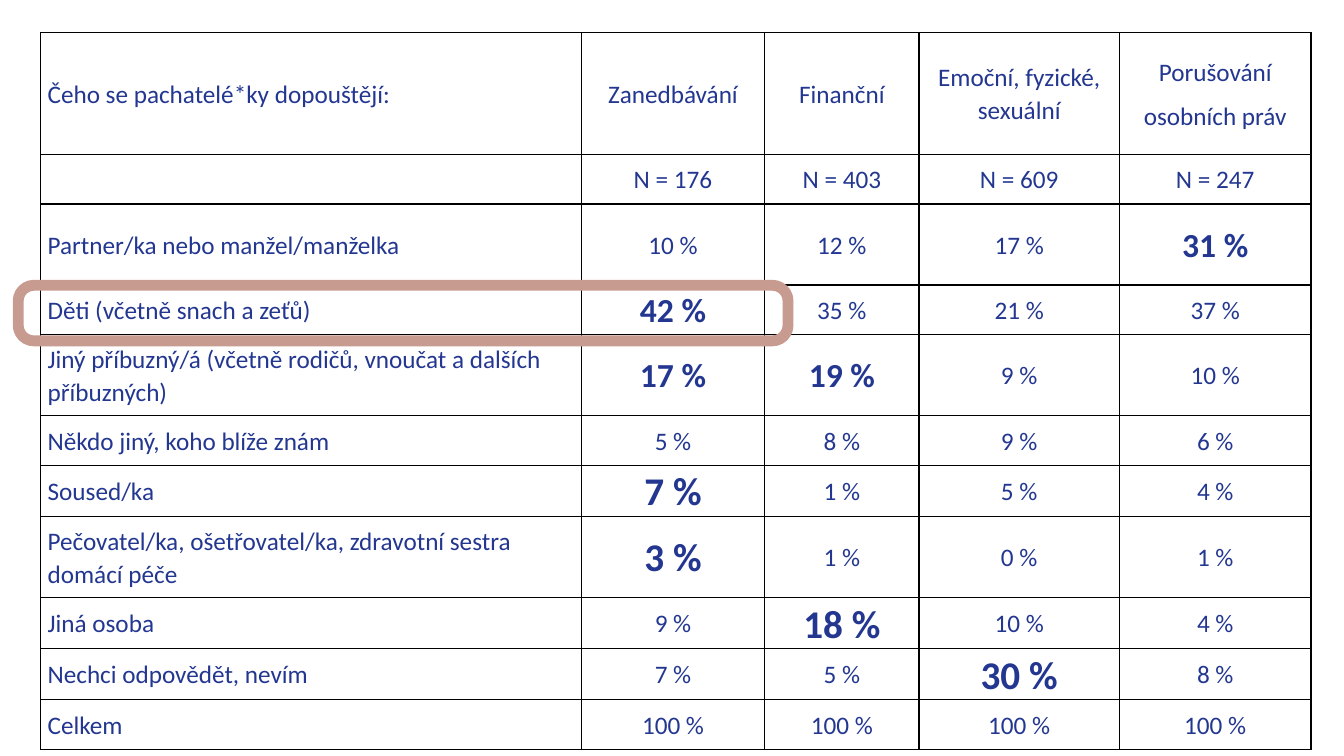
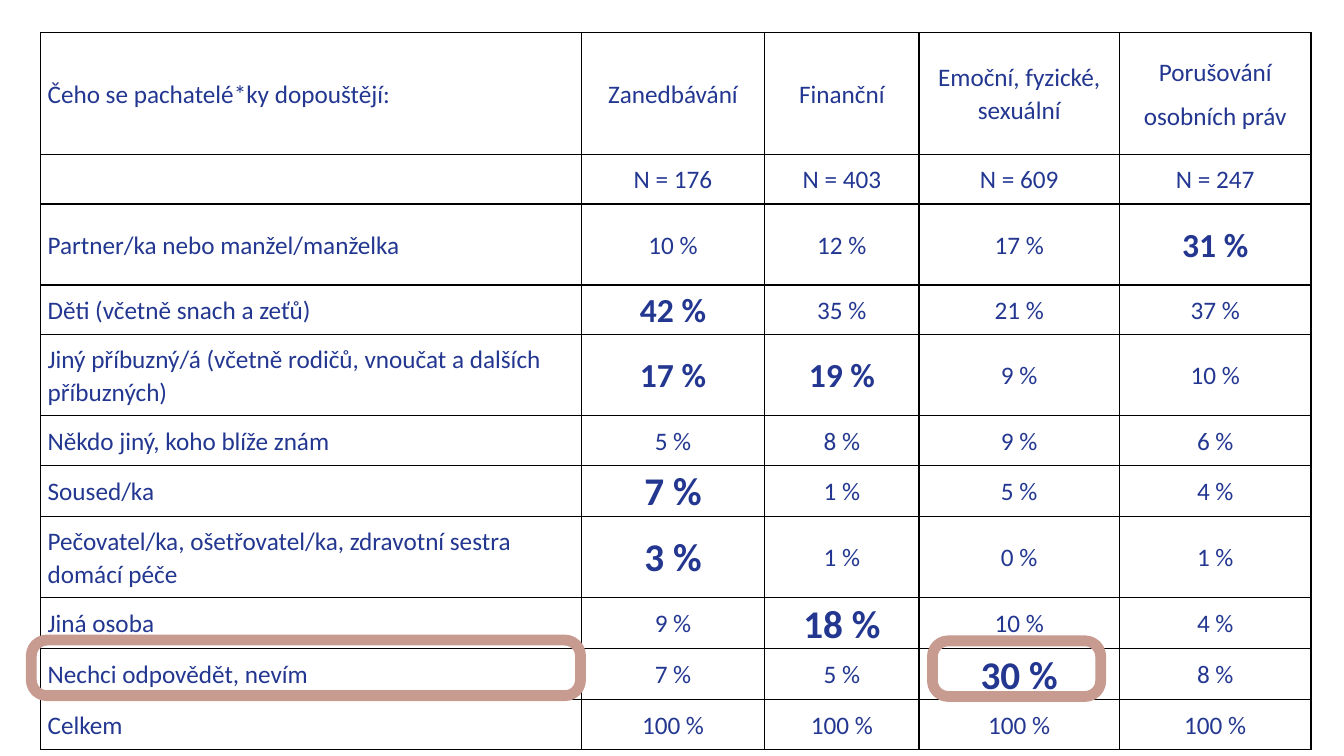
from pptx import Presentation
from pptx.dml.color import RGBColor
from pptx.enum.shapes import MSO_SHAPE
from pptx.enum.text import MSO_ANCHOR, PP_ALIGN
from pptx.oxml import parse_xml
from pptx.oxml.ns import nsdecls
from pptx.util import Cm, Pt

NAVY = "233791"
ROSE = "C89B91"
BLACK = "000000"
FONT = "Calibri"

# Table geometry in centimetres
TABLE_LEFT, TABLE_TOP = 1.02, 0.82
COLUMN_WIDTHS = [13.63, 4.62, 3.89, 5.05, 4.83]
HEADER, SINGLE, DOUBLE = 3.07, 1.25, 2.04
ROW_HEIGHTS = [HEADER, SINGLE, DOUBLE, SINGLE, DOUBLE, SINGLE,
               SINGLE, DOUBLE, SINGLE, SINGLE, SINGLE]

ROWS = [
    ["Čeho se pachatelé*ky dopouštějí:", "Zanedbávání", "Finanční",
     "Emoční, fyzické, sexuální", "Porušování\nosobních práv"],
    ["", "N = 176", "N = 403", "N = 609", "N = 247"],
    ["Partner/ka nebo manžel/manželka", "10 %", "12 %", "17 %", "31 %"],
    ["Děti (včetně snach a zeťů)", "42 %", "35 %", "21 %", "37 %"],
    ["Jiný příbuzný/á (včetně rodičů, vnoučat a dalších příbuzných)",
     "17 %", "19 %", "9 %", "10 %"],
    ["Někdo jiný, koho blíže znám", "5 %", "8 %", "9 %", "6 %"],
    ["Soused/ka", "7 %", "1 %", "5 %", "4 %"],
    ["Pečovatel/ka, ošetřovatel/ka, zdravotní sestra domácí péče",
     "3 %", "1 %", "0 %", "1 %"],
    ["Jiná osoba", "9 %", "18 %", "10 %", "4 %"],
    ["Nechci odpovědět, nevím", "7 %", "5 %", "30 %", "8 %"],
    ["Celkem", "100 %", "100 %", "100 %", "100 %"],
]

# Bold values: (row, column) -> size in points
EMPHASIS = {(2, 4): 24, (3, 1): 24, (4, 1): 24, (4, 2): 24,
            (6, 1): 28, (7, 1): 28, (8, 2): 28, (9, 3): 28}

# Highlight frames of each slide: left, top, width in centimetres
FRAME_HEIGHT = 1.4
SLIDE_FRAMES = [
    [(0.46, 7.19, 19.4)],
    [(23.5, 16.15, 4.24), (0.79, 16.13, 13.84)],
]


def color(value):
    return RGBColor.from_string(value)


def format_cell(cell, text, size, bold, alignment):
    cell.text = text
    cell.vertical_anchor = MSO_ANCHOR.MIDDLE
    cell.margin_left = cell.margin_right = Cm(0.18)
    cell.margin_top = cell.margin_bottom = 0
    for paragraph in cell.text_frame.paragraphs:
        paragraph.alignment = alignment
        paragraph.line_spacing = 1.07
        paragraph.space_after = Pt(8)
        paragraph.font.name = FONT
        paragraph.font.size = Pt(size)
        paragraph.font.bold = bold
        paragraph.font.color.rgb = color(NAVY)
    properties = cell._tc.get_or_add_tcPr()
    for side in ("lnL", "lnR", "lnT", "lnB"):
        properties.append(parse_xml(
            f'<a:{side} {nsdecls("a")} w="{Pt(1)}"><a:solidFill>'
            f'<a:srgbClr val="{BLACK}"/></a:solidFill></a:{side}>'))
    cell.fill.background()


presentation = Presentation()
presentation.slide_width = Cm(33.87)
presentation.slide_height = Cm(19.05)
blank_layout = presentation.slide_layouts[6]

for frames in SLIDE_FRAMES:
    slide = presentation.slides.add_slide(blank_layout)

    # Table of perpetrators by type of abuse
    table = slide.shapes.add_table(
        len(ROWS), len(COLUMN_WIDTHS), Cm(TABLE_LEFT), Cm(TABLE_TOP),
        Cm(sum(COLUMN_WIDTHS)), Cm(sum(ROW_HEIGHTS))).table
    table.first_row = False
    table.horz_banding = False
    for column, width in zip(table.columns, COLUMN_WIDTHS):
        column.width = Cm(width)
    for row, height in zip(table.rows, ROW_HEIGHTS):
        row.height = Cm(height)
    for row_index, texts in enumerate(ROWS):
        for column_index, text in enumerate(texts):
            position = (row_index, column_index)
            format_cell(table.cell(*position), text,
                        EMPHASIS.get(position, 18), position in EMPHASIS,
                        PP_ALIGN.CENTER if column_index else PP_ALIGN.LEFT)

    # Highlight frames
    for left, top, width in frames:
        shape = slide.shapes.add_shape(
            MSO_SHAPE.ROUNDED_RECTANGLE, Cm(left), Cm(top),
            Cm(width), Cm(FRAME_HEIGHT))
        shape.adjustments[0] = 0.28
        shape.shadow.inherit = False
        shape.fill.background()
        shape.line.color.rgb = color(ROSE)
        shape.line.width = Pt(7.75)

presentation.save("out.pptx")
